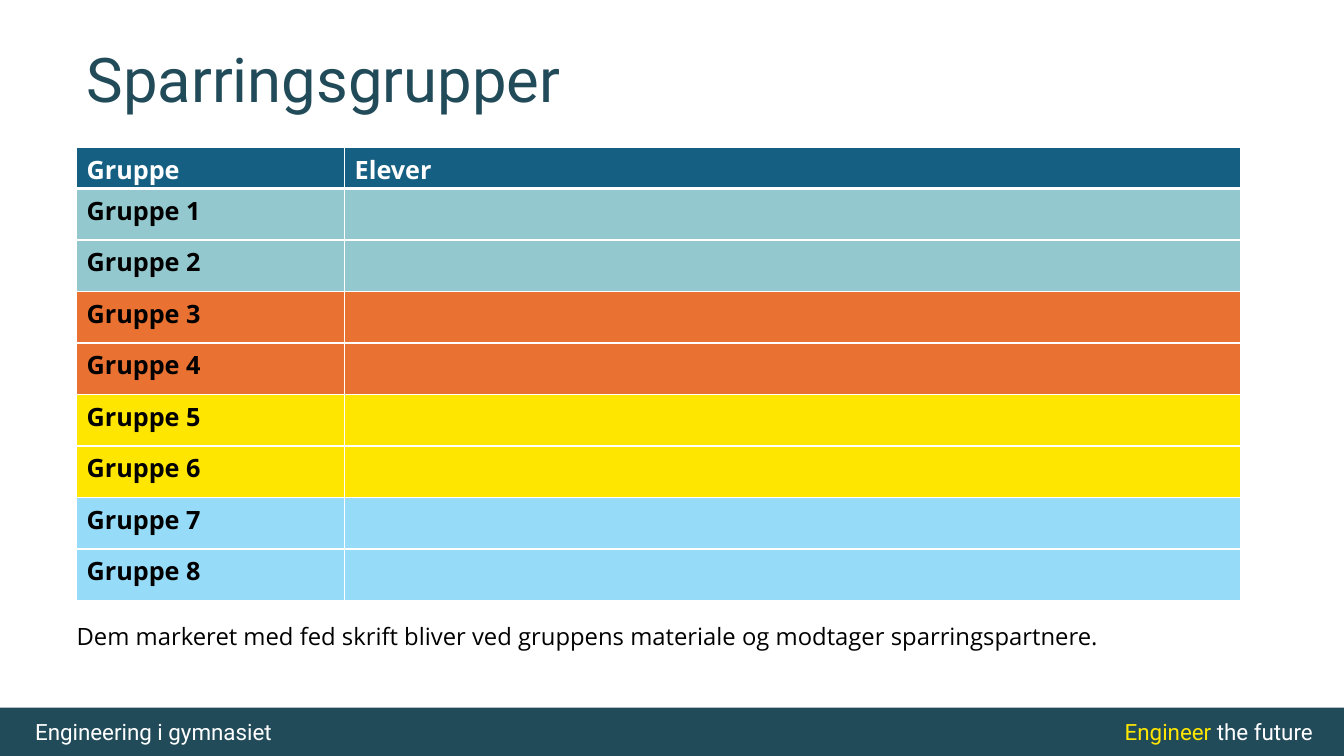
from lxml.etree import SubElement
from pptx import Presentation
from pptx.dml.color import RGBColor
from pptx.enum.shapes import MSO_SHAPE
from pptx.enum.text import MSO_ANCHOR, PP_ALIGN
from pptx.oxml.ns import qn
from pptx.util import Pt

COLORS = {
    "petrol": "224B5A", "header": "156082", "white": "FFFFFF", "black": "000000",
    "teal": "92C8CE", "orange": "E97132", "yellow": "FFE600", "sky": "96DCF8",
}
GROUP_COLORS = ["teal", "orange", "yellow", "sky"]  # two groups share each colour


def rgb(name):
    return RGBColor.from_string(COLORS[name])


def style_run(r, font, size, color, bold=False):
    r.font.name, r.font.size, r.font.bold = font, Pt(size), bold
    r.font.color.rgb = rgb(color)


def add_text(s, box, parts, font, size, inset=7.2):
    """Text box with one paragraph made of (text, colour) parts."""
    tf = s.shapes.add_textbox(*map(Pt, box)).text_frame
    tf.word_wrap = True
    tf.margin_left = tf.margin_right = Pt(inset)
    for text, color in parts:
        r = tf.paragraphs[0].add_run()
        r.text = text
        style_run(r, font, size, color)


def add_footer(s, box):
    left, top, width, height = box
    bar = s.shapes.add_shape(MSO_SHAPE.RECTANGLE, *map(Pt, box))
    bar.shadow.inherit = False
    bar.fill.solid()
    bar.fill.fore_color.rgb = rgb("petrol")
    bar.line.fill.background()
    label_top, label_width, label_height = top + 3.6, 260, 26.6
    add_text(s, (left + 18, label_top, label_width, label_height),
             [("Engineering i gymnasiet", "white")], "Roboto", 16)
    add_text(s, (left + 796.3, label_top, width - 796.3, label_height),
             [("Engineer", "yellow"), (" the future", "white")], "Roboto", 16)


def add_title(s, box):
    title = s.shapes.title
    title.left, title.top, title.width, title.height = map(Pt, box)
    tf = title.text_frame
    tf.text = "Sparringsgrupper"
    tf.vertical_anchor = MSO_ANCHOR.MIDDLE
    p = tf.paragraphs[0]
    p.alignment, p.line_spacing = PP_ALIGN.LEFT, 0.9
    style_run(p.runs[0], "Roboto", 44, "petrol")


def set_borders(cell, bottom=1, top=1):
    tc_pr = cell._tc.get_or_add_tcPr()
    widths = {"lnL": 1, "lnR": 1, "lnT": top, "lnB": bottom}
    for i, (side, width) in enumerate(widths.items()):
        ln = SubElement(tc_pr, qn(f"a:{side}"), w=str(Pt(width)))
        fill = SubElement(ln, qn("a:solidFill"))
        SubElement(fill, qn("a:srgbClr"), val=COLORS["white"])
        tc_pr.insert(i, ln)


def add_group_table(s, box):
    left, top, width, height = box
    rows = [("Gruppe", "Elever")] + [(f"Gruppe {n}", "") for n in range(1, 9)]
    table = s.shapes.add_table(len(rows), 2, *map(Pt, box)).table
    table.horz_banding = False
    group_width, header_height = 191.5, 29.5
    table.columns[0].width = Pt(group_width)
    table.columns[1].width = Pt(width - group_width)
    for i, texts in enumerate(rows):
        is_header = i == 0
        row_height = header_height if is_header else (height - header_height) / (len(rows) - 1)
        table.rows[i].height = Pt(row_height)
        for j, text in enumerate(texts):
            cell = table.cell(i, j)
            cell.fill.solid()
            cell.fill.fore_color.rgb = rgb("header" if is_header else GROUP_COLORS[(i - 1) // 2])
            set_borders(cell, bottom=3 if is_header else 1, top=3 if i == 1 else 1)
            p = cell.text_frame.paragraphs[0]
            p.font.size = Pt(18)
            if text:
                r = p.add_run()
                r.text = text
                style_run(r, "Open Sans", 18, "white" if is_header else "black", bold=True)


def build_group_slide(prs):
    s = prs.slides.add_slide(prs.slide_layouts[5])
    left = 54.7
    add_footer(s, (0, 505.5, 960, 34.5))
    add_title(s, (left, 6.5, 828, 104.4))
    add_group_table(s, (left, 105.1, 831.2, 324))
    add_text(s, (left, 440.6, 828.7, 49.7),
             [("Dem markeret med fed skrift bliver ved gruppens materiale "
               "og modtager sparringspartnere.", "black")], "Open Sans", 17, inset=0)


def main():
    prs = Presentation()
    prs.slide_width, prs.slide_height = Pt(960), Pt(540)
    build_group_slide(prs)
    prs.save("out.pptx")


if __name__ == "__main__":
    main()
